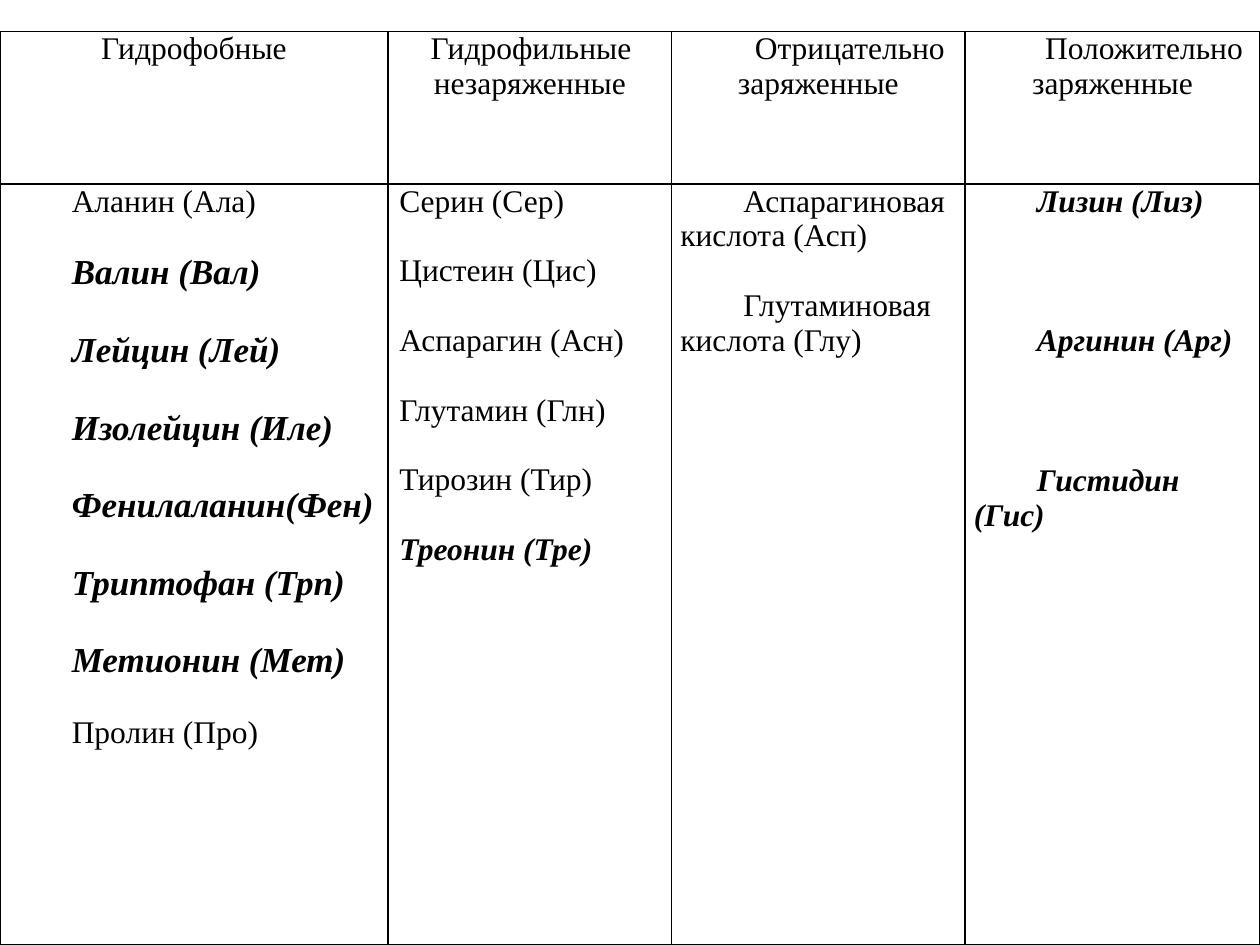
from lxml.etree import SubElement
from pptx import Presentation
from pptx.dml.color import RGBColor
from pptx.enum.text import PP_ALIGN as Align
from pptx.oxml.ns import qn
from pptx.util import Inches, Pt

COLORS = {"ink": "000000", "paper": "FFFFFF"}
FONT = "Times New Roman"
SIZE = 18
LINE_HEIGHT = 1.107  # single line height of the font, in ems
ROW_HEIGHTS = (1.21, 6.04)

# Each amino acid: name, essential (bold italic)
GROUPS = [
    {"title": "Гидрофобные", "width": 3.08, "title_indent": -0.11, "indent": 0.5,
     "align": Align.LEFT, "gap_lines": 1, "essential_size": 20,
     "acids": [("Аланин (Ала)", False), ("Валин (Вал)", True), ("Лейцин (Лей)", True),
               ("Изолейцин (Иле)", True), ("Фенилаланин(Фен)", True),
               ("Триптофан (Трп)", True), ("Метионин (Мет)", True),
               ("Пролин (Про)", False)]},
    {"title": "Гидрофильные незаряженные", "width": 2.25, "title_indent": 0.02,
     "indent": 0.02, "align": Align.JUSTIFY, "gap_lines": 1, "essential_size": SIZE,
     "acids": [("Серин (Сер)", False), ("Цистеин (Цис)", False),
               ("Аспарагин (Асн)", False), ("Глутамин (Глн)", False),
               ("Тирозин (Тир)", False), ("Треонин (Тре)", True)]},
    {"title": "Отрицательно заряженные", "width": 2.33, "title_indent": 0.5,
     "indent": 0.5, "align": Align.LEFT, "gap_lines": 1, "essential_size": SIZE,
     "acids": [("Аспарагиновая кислота (Асп)", False),
               ("Глутаминовая кислота (Глу)", False)]},
    {"title": "Положительно заряженные", "width": 2.34, "title_indent": 0.5,
     "indent": 0.5, "align": Align.JUSTIFY, "gap_lines": 3, "essential_size": SIZE,
     "acids": [("Лизин (Лиз)", True), ("Аргинин (Арг)", True), ("Гистидин (Гис)", True)]},
]


def format_cell(cell):
    """Set margins, black borders and a plain fill."""
    cell.margin_left = cell.margin_right = Inches(0.07)
    cell.margin_top = cell.margin_bottom = 0
    properties = cell._tc.get_or_add_tcPr()
    for side in ("lnL", "lnR", "lnT", "lnB"):
        border = SubElement(properties, qn(f"a:{side}"), w=str(Pt(1)))
        fill = SubElement(border, qn("a:solidFill"))
        SubElement(fill, qn("a:srgbClr"), val=COLORS["ink"])
    cell.fill.solid()
    cell.fill.fore_color.rgb = RGBColor.from_string(COLORS["paper"])


def format_paragraph(paragraph, align, indent, size=SIZE, essential=False):
    paragraph.alignment = align
    properties = paragraph._p.get_or_add_pPr()
    properties.set("marL", "0")
    properties.set("indent", str(Inches(indent)))
    for run in paragraph.runs:
        font = run.font
        font.name, font.size = FONT, Pt(size)
        font.bold = font.italic = essential
        font.color.rgb = RGBColor.from_string(COLORS["ink"])


def fill_acids(cell, group):
    """List the amino acids of one group, spaced by whole lines."""
    frame = cell.text_frame
    frame.text = "\n".join(name for name, _ in group["acids"])
    previous_size = None
    for paragraph, (_, essential) in zip(frame.paragraphs, group["acids"]):
        size = group["essential_size"] if essential else SIZE
        format_paragraph(paragraph, group["align"], group["indent"], size, essential)
        if previous_size:
            gap_size = min(size, previous_size)
            paragraph.space_before = Pt(round(gap_size * LINE_HEIGHT * group["gap_lines"], 1))
        previous_size = size


def add_acid_table(slide, left, top, width, height):
    table = slide.shapes.add_table(2, len(GROUPS), left, top, width, height).table
    table.first_row = table.horz_banding = False
    for row, row_height in zip(table.rows, ROW_HEIGHTS):
        row.height = Inches(row_height)
    for index, group in enumerate(GROUPS):
        table.columns[index].width = Inches(group["width"])
        heading, acids = table.cell(0, index), table.cell(1, index)
        for cell in (heading, acids):
            format_cell(cell)
        heading.text_frame.text = group["title"]
        format_paragraph(heading.text_frame.paragraphs[0], Align.CENTER, group["title_indent"])
        fill_acids(acids, group)


def main():
    deck = Presentation()
    deck.slide_width, deck.slide_height = Inches(10), Inches(7.5)
    slide = deck.slides.add_slide(deck.slide_layouts[6])
    add_acid_table(slide, 0, Inches(0.25), Inches(10), Inches(7.25))
    deck.save("out.pptx")


if __name__ == "__main__":
    main()
